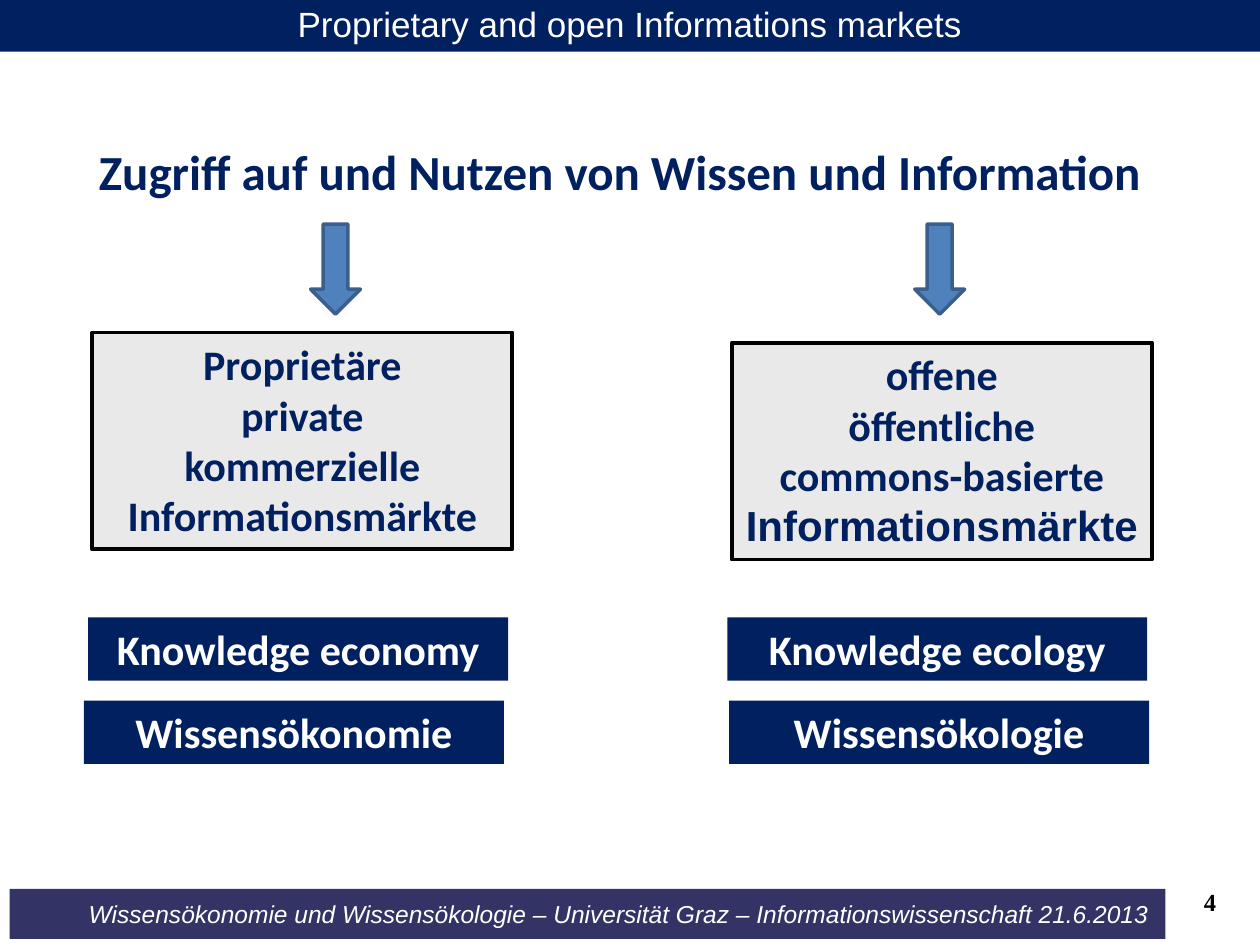
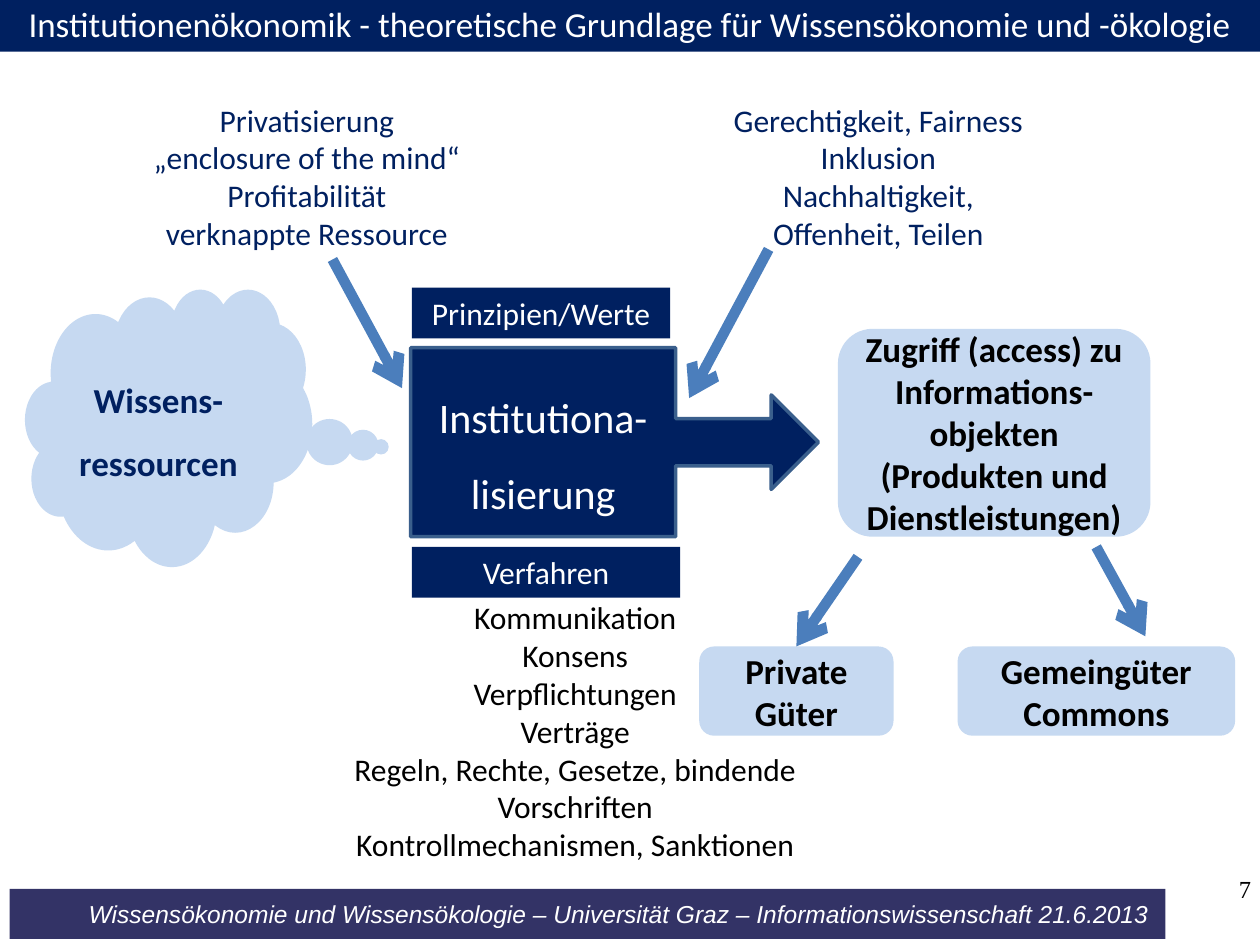
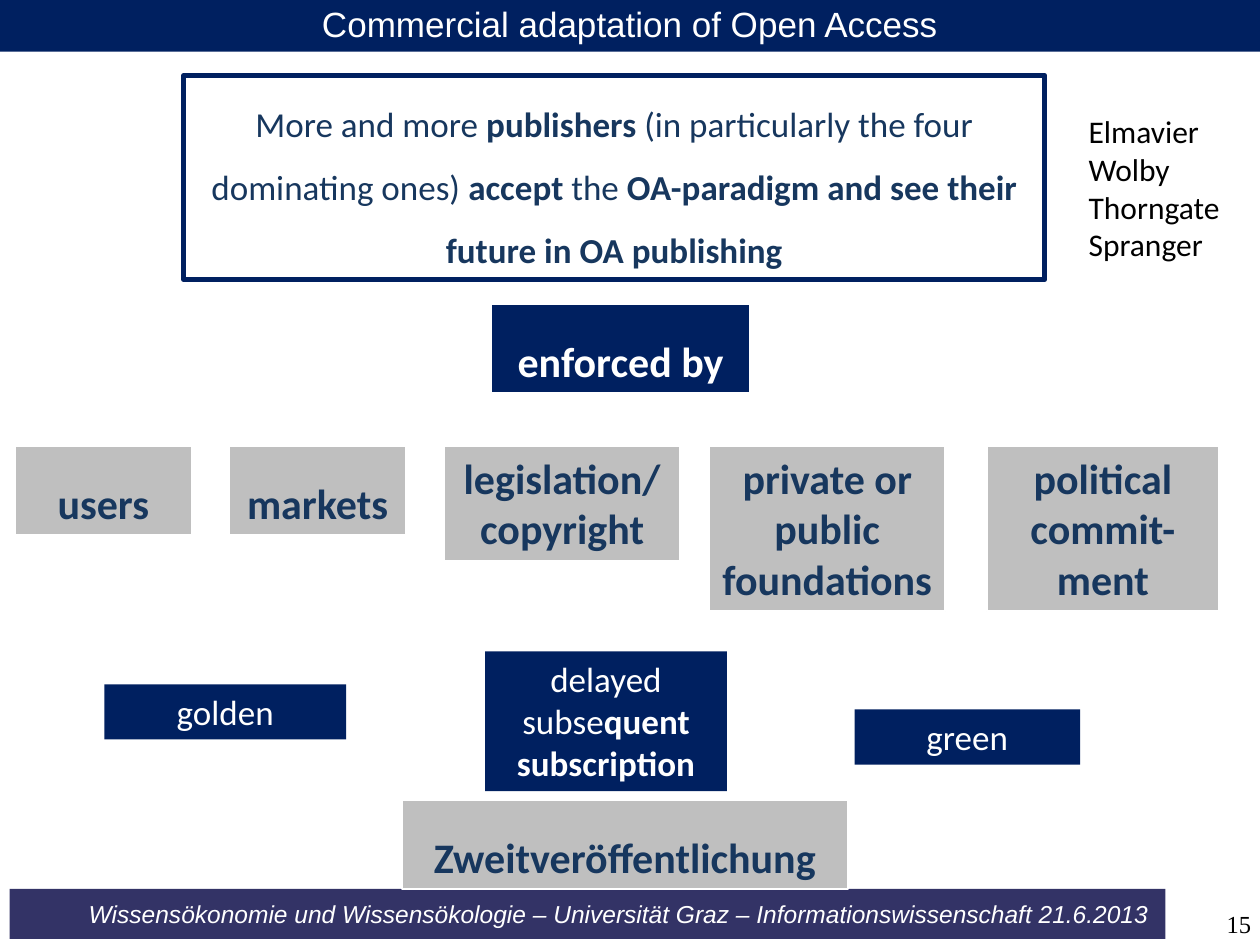
"""Build three slides on knowledge economy and knowledge ecology."""
from lxml import etree
from pptx import Presentation
from pptx import util as u
from pptx.dml.color import RGBColor
from pptx.enum import shapes, text
from pptx.oxml import ns

COLORS = {
    "navy": "002060", "footer": "333366", "white": "FFFFFF", "black": "000000",
    "blue": "4F81BD", "outline": "3A5F8C", "connector": "4B7EBC", "pale": "C6D9F1",
    "light": "E9E9E9", "gray": "BFBFBF", "ink": "17375E",
}
RGB = {name: RGBColor.from_string(value) for name, value in COLORS.items()}
KIND = shapes.MSO_SHAPE
ALIGN = text.PP_ALIGN
ANCHOR = text.MSO_ANCHOR


def write(shape, lines, size, color, bold=False, font="Calibri", align=ALIGN.CENTER,
          anchor=ANCHOR.TOP, spacing=1.0, inset=None):
    """Write lines into a shape; a line is a string or a list of (text, bold) runs."""
    frame = shape.text_frame
    frame.word_wrap = True
    frame.auto_size = text.MSO_AUTO_SIZE.NONE
    frame.vertical_anchor = anchor
    if inset is not None:
        frame.margin_left = frame.margin_right = u.Pt(inset)
        frame.margin_top = frame.margin_bottom = u.Pt(inset)
    for number, line in enumerate(lines):
        paragraph = frame.add_paragraph() if number else frame.paragraphs[0]
        paragraph.alignment = align
        paragraph.line_spacing = spacing
        for words, strong in [(line, bold)] if isinstance(line, str) else line:
            run = paragraph.add_run()
            run.text = words
            run.font.name = font
            run.font.size = u.Pt(size)
            run.font.bold = strong
            run.font.color.rgb = RGB[color]


def add_box(slide, place, fill, kind=KIND.RECTANGLE, line=None, width=1):
    """Add a filled shape at (left, top, width, height) in points."""
    shape = slide.shapes.add_shape(kind, *map(u.Pt, place))
    shape.shadow.inherit = False
    shape.fill.solid()
    shape.fill.fore_color.rgb = RGB[fill]
    if line:
        shape.line.color.rgb = RGB[line]
        shape.line.width = u.Pt(width)
    else:
        shape.line.fill.background()
    return shape


presentation = Presentation()
presentation.slide_width = u.Pt(720)
presentation.slide_height = u.Pt(540)
layout = presentation.slide_layouts[5]

slides = []
for title, font, page, bold, place in [
    ("Proprietary and open Informations markets", "Arial", "4", True, (660, 497, 35, 37)),
    ("Institutionenökonomik - theoretische Grundlage für Wissensökonomie und -ökologie",
     "Calibri", "7", False, (666, 499, 49, 18)),
    ("Commercial adaptation of Open Access", "Arial", "15", False, (666, 519, 49, 18)),
]:
    slide = presentation.slides.add_slide(layout)
    band = slide.shapes.title
    band.left, band.top, band.width, band.height = map(u.Pt, (0, -2, 720, 31.5))
    band.fill.solid()
    band.fill.fore_color.rgb = RGB["navy"]
    write(band, [title], 20, "white", font=font)
    number = slide.shapes.add_textbox(*map(u.Pt, place))
    write(number, [page], 14, "black", bold, "Times New Roman", ALIGN.RIGHT,
          ANCHOR.MIDDLE, inset=0)
    slides.append(slide)
markets, institutions, adaptation = slides

footer = add_box(markets, (5.5, 508, 660.5, 28.5), "footer")
write(footer, ["Wissensökonomie und Wissensökologie – Universität Graz – "
               "Informationswissenschaft 21.6.2013"],
      14, "white", font="Arial", anchor=ANCHOR.MIDDLE, inset=0)
footer.text_frame.margin_left = u.Pt(36)
footer.text_frame.paragraphs[0].runs[0].font.italic = True
layout.shapes.element.append(footer.element)

heading = markets.shapes.add_textbox(*map(u.Pt, (48, 60.5, 612, 52.5)))
write(heading, ["Zugriff auf und Nutzen von Wissen und Information"], 28, "navy", True,
      spacing=1.5)
for market, place, arrow_left, labels in [
    (["Proprietäre", "private", "kommerzielle", "Informationsmärkte"], (52.8, 190), 177.5,
     [("Knowledge economy", 50.4, 352.8), ("Wissensökonomie", 48, 400.4)]),
    (["offene", "öffentliche", "commons-basierte", "Informationsmärkte"], (418.2, 195.8), 522.7,
     [("Knowledge ecology", 415.6, 352.8), ("Wissensökologie", 416.6, 400.4)]),
]:
    box = add_box(markets, (*place, 240, 124), "light", line="black", width=2.25)
    write(box, market, 24, "navy", True)
    add_box(markets, (arrow_left, 128, 28.5, 51.5), "blue", KIND.DOWN_ARROW, "outline", 2)
    for label, left, top in labels:
        write(add_box(markets, (left, top, 240, 36.2), "navy"), [label], 24, "white", True)
box.text_frame.paragraphs[-1].runs[0].font.name = "Arial"

cloud = add_box(institutions, (14.4, 165, 164, 158.5), "pale", KIND.CLOUD_CALLOUT)
cloud.adjustments[0], cloud.adjustments[1] = 0.74, 0.07
write(cloud, ["Wissens-ressourcen"], 20, "navy", True, anchor=ANCHOR.MIDDLE, spacing=1.5)
for label, top, width in [("Prinzipien/Werte", 164.4, 147.6), ("Verfahren", 312.5, 153.3)]:
    write(add_box(institutions, (235.4, top, width, 29), "navy"), [label], 18, "white")

for lines, place, color in [
    (["Privatisierung", "„enclosure of the mind“", "Profitabilität", "verknappte Ressource"],
     (70.6, 54, 209.5, 94.5), "navy"),
    (["Gerechtigkeit, Fairness", "Inklusion", "Nachhaltigkeit, Offenheit, Teilen"],
     (405.4, 54, 193, 94.5), "navy"),
    (["Kommunikation", "Konsens", "Verpflichtungen", "Verträge",
      "Regeln, Rechte, Gesetze, bindende Vorschriften", "Kontrollmechanismen, Sanktionen"],
     (161.3, 338.4, 334.8, 160), "black"),
]:
    write(institutions.shapes.add_textbox(*map(u.Pt, place)), lines, 18, color)

callout = add_box(institutions, (234.7, 198.7, 233, 108), "navy", KIND.RIGHT_ARROW_CALLOUT,
                  "outline", 2)
write(callout, ["Institutiona-", "lisierung"], 24, "white", anchor=ANCHOR.MIDDLE, spacing=1.5)

goods = []
for lines, place in [
    (["Zugriff (access) zu Informations-objekten (Produkten und Dienstleistungen)"],
     (478.8, 187.9, 178.6, 118.8)),
    (["Private Güter"], (399.6, 369.4, 111, 51)),
    (["Gemeingüter", "Commons"], (547.2, 369.4, 158.6, 51)),
]:
    rounded = add_box(institutions, place, "pale", KIND.ROUNDED_RECTANGLE)
    write(rounded, lines, 20, "black", True, anchor=ANCHOR.MIDDLE)
    goods.append(rounded)

for ends, target in [
    ((439.2, 142.5, 393.8, 227.5), None),
    ((190, 148.3, 229.7, 221.8), None),
    ((490.3, 318.2, 455.1, 369.4), goods[1]),
    ((626.4, 312.5, 654.5, 363.6), None),
]:
    connector = institutions.shapes.add_connector(shapes.MSO_CONNECTOR.STRAIGHT,
                                                  *map(u.Pt, ends))
    if target:
        connector.end_connect(target, 0)
    connector.line.color.rgb = RGB["connector"]
    connector.line.width = u.Pt(6)
    etree.SubElement(connector.line._get_or_add_ln(), ns.qn("a:tailEnd"), type="arrow")
    etree.SubElement(connector.element.spPr, ns.qn("a:effectLst"))

statement = add_box(adaptation, (105, 43.2, 492, 116.6), "white", line="navy", width=3)
write(statement, [[("More and more ", False), ("publishers", True),
                   (" (in particularly the four dominating ones) ", False),
                   ("accept", True), (" the ", False),
                   ("OA-paradigm and see their future in OA publishing", True)]],
      20, "ink", spacing=1.5)
publishers = adaptation.shapes.add_textbox(*map(u.Pt, (615, 60.5, 105, 94.5)))
write(publishers, ["Elmavier", "Wolby", "Thorngate", "Spranger"], 18, "black",
      align=ALIGN.LEFT)

for label, place, fill, color, spacing in [
    ("enforced by", (280.8, 173.9, 147.6, 50.8), "navy", "white", 1.5),
    ("users", (8.6, 255, 101, 50.8), "gray", "ink", 1.5),
    ("markets", (131, 255, 101, 50.8), "gray", "ink", 1.5),
    ("legislation/ copyright", (253.7, 255, 135, 65.5), "gray", "ink", 1),
    ("private or public foundations", (405.2, 255, 135, 94.3), "gray", "ink", 1),
    ("political commit-ment", (564, 255, 132.5, 94.3), "gray", "ink", 1),
    ("Zweitveröffentlichung", (229.7, 457.2, 254.9, 50.8), "gray", "ink", 1.5),
]:
    write(add_box(adaptation, place, fill, line="white"), [label], 24, color, True,
          spacing=spacing)
for label, place in [
    ("golden", (59.6, 391, 138.2, 31.5)),
    ([("delayed subse", False), ("quent subscription", True)], (277.2, 372.2, 138.2, 80)),
    ("green", (488.3, 405.4, 128.9, 31.5)),
]:
    write(add_box(adaptation, place, "navy"), [label], 20, "white")

presentation.save("out.pptx")
